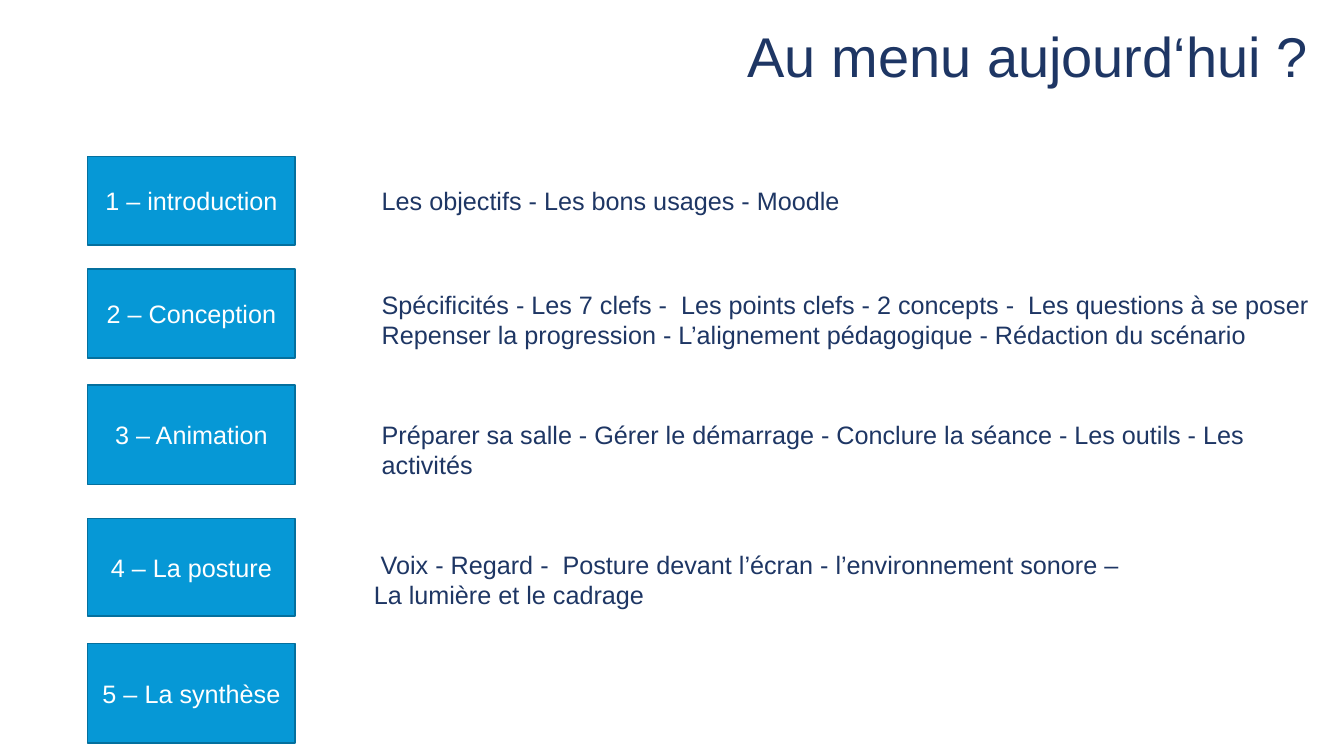
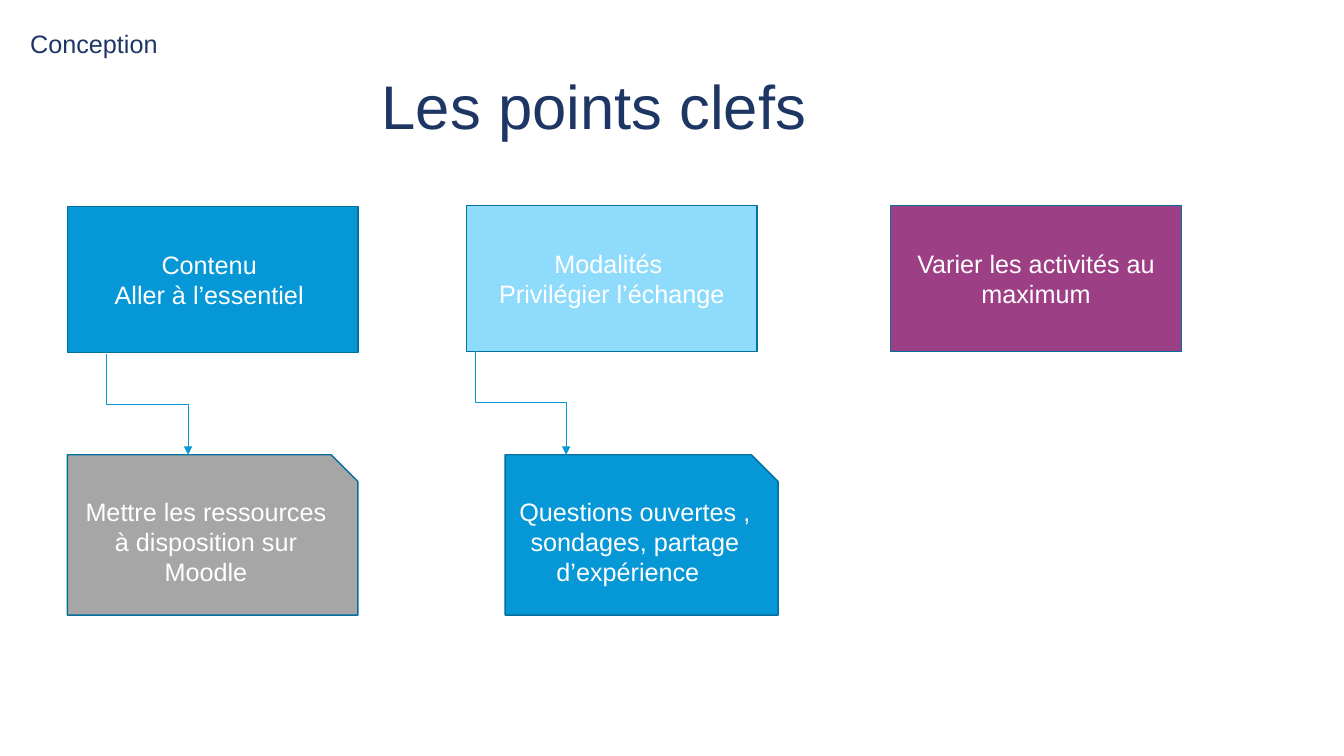
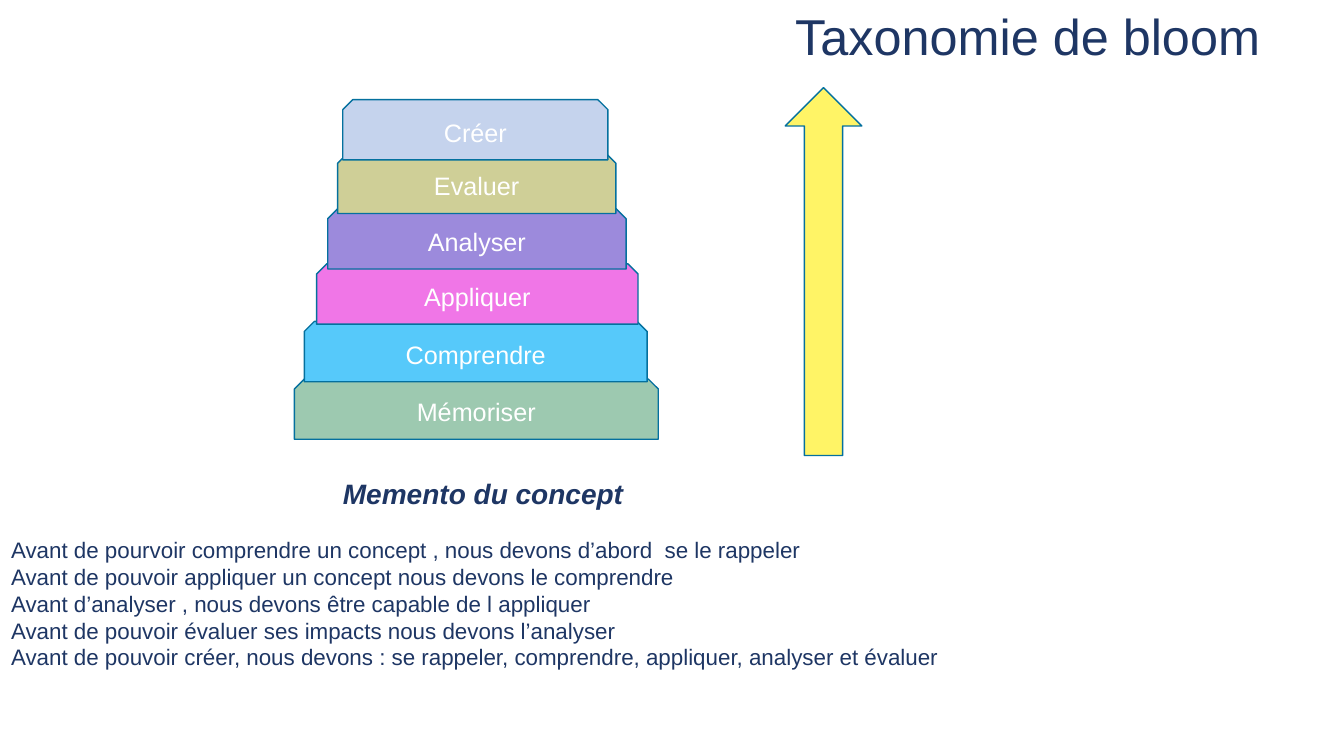
"""Build three training slides: the menu, the key points and Bloom's taxonomy."""
from lxml import etree
from pptx import Presentation
from pptx import util as u
from pptx.dml.color import RGBColor
from pptx.enum import shapes, text
from pptx.oxml.ns import qn

COLOURS = {
    "navy": "1E3664", "white": "FFFFFF", "blue": "0698D6", "outline": "04709E",
    "sky": "8EDBFC", "plum": "9D3F84", "grey": "A6A6A6", "yellow": "FFF466",
    "green": "9DC9B0", "azure": "56C9FA", "pink": "F076E7", "violet": "9C8ADC",
    "olive": "CFCF97", "pale": "C5D3ED",
}
FONT = "Arial"
SHAPE = shapes.MSO_SHAPE
CENTRE = text.PP_ALIGN.CENTER
MIDDLE = text.MSO_ANCHOR.MIDDLE


def colour(name):
    return RGBColor.from_string(COLOURS[name])


def apply_formats(target, formats):
    for name, value in formats.items():
        setattr(target, name, value)


def write_paragraph(paragraph, words, tint="navy", size=18, font=None, **formats):
    apply_formats(paragraph, formats)
    run = paragraph.add_run()
    run.text = words
    apply_formats(run.font, {"name": FONT, "size": u.Pt(size), **(font or {})})
    run.font.color.rgb = colour(tint)


def write_lines(frame, lines, **formats):
    for index, line in enumerate(lines):
        paragraph = frame.add_paragraph() if index else frame.paragraphs[0]
        write_paragraph(paragraph, line, **formats)


def add_text(slide, box, *lines, wrap=True, anchor=text.MSO_ANCHOR.TOP, **formats):
    frame = slide.shapes.add_textbox(*map(u.Cm, box)).text_frame
    apply_formats(frame, {"word_wrap": wrap, "vertical_anchor": anchor})
    write_lines(frame, lines, **formats)
    return frame


def add_title(slide, box, words, size):
    add_text(slide, box, words, size=size, anchor=MIDDLE, line_spacing=0.8)


def add_block(slide, kind, box, fill, *lines):
    shape = slide.shapes.add_shape(kind, *map(u.Cm, box))
    shape.shadow.inherit = False
    shape.fill.solid()
    shape.fill.fore_color.rgb = colour(fill)
    shape.line.color.rgb = colour("outline")
    shape.line.width = u.Pt(1)
    apply_formats(shape.text_frame, {"word_wrap": True, "vertical_anchor": MIDDLE})
    write_lines(shape.text_frame, lines, tint="white", alignment=CENTRE)


def add_down_elbow(slide, start, end):
    (left, top), (right, bottom) = start, end
    middle_x, middle_y = (left + right) / 2, (top + bottom) / 2
    half_run, half_drop = (right - left) / 2, (bottom - top) / 2
    corners = (middle_x + half_drop, middle_y - half_run,
               middle_x - half_drop, middle_y + half_run)
    connector = slide.shapes.add_connector(
        shapes.MSO_CONNECTOR.ELBOW, *map(u.Cm, corners))
    connector.line.color.rgb = colour("blue")
    connector.line.width = u.Pt(0.5)
    properties = connector._element.spPr
    properties.find(qn("a:xfrm")).set("rot", str(270 * 60000))
    etree.SubElement(properties.find(qn("a:ln")), qn("a:tailEnd"), type="triangle")
    etree.SubElement(properties, qn("a:effectLst"))


def build_menu(slide):
    add_title(slide, (18.59, 0.66, 14.66, 1.75), "Au menu aujourd‘hui ?", 40)
    steps = [
        (3.94, 2.24, "1 – introduction"),
        (6.78, 2.24, "2 – Conception"),
        (9.7, 2.51, "3 – Animation"),
        (13.06, 2.46, "4 – La posture"),
        (16.21, 2.51, "5 – La synthèse"),
    ]
    for top, height, label in steps:
        add_block(slide, SHAPE.RECTANGLE, (2.21, top, 5.23, height), "blue", label)
    details = [
        ((9.37, 4.55, 12.24, 1.02), "Les objectifs - Les bons usages - Moodle"),
        ((9.37, 7.16, 24.26, 1.8),
         "Spécificités - Les 7 clefs -  Les points clefs - 2 concepts -  "
         "Les questions à se poser  Repenser la progression - "
         "L’alignement pédagogique - Rédaction du scénario"),
        ((9.37, 10.44, 23.85, 1.8),
         "Préparer sa salle - Gérer le démarrage - Conclure la séance - "
         "Les outils - Les activités"),
        ((9.17, 13.72, 19.53, 1.8),
         " Voix - Regard -  Posture devant l’écran - l’environnement sonore – "
         "La lumière et le cadrage"),
    ]
    for box, words in details:
        add_text(slide, box, words)


def build_key_points(slide):
    add_title(slide, (9.37, 0.97, 18.69, 3.68), "Les points clefs", 44)
    points = [
        (1.7, 5.21, "blue", "Contenu ", "Aller à l’essentiel "),
        (11.76, 5.18, "sky", "Modalités ", "Privilégier l’échange"),
        (22.45, 5.18, "plum", "Varier les activités au maximum"),
    ]
    for left, top, fill, *lines in points:
        add_block(slide, SHAPE.RECTANGLE, (left, top, 7.32, 3.68), fill, *lines)
    actions = [
        (1.7, 7.32, "grey", "Mettre les ressources à disposition sur Moodle"),
        (12.73, 6.88, "blue", "Questions ouvertes , sondages, partage d’expérience  "),
    ]
    for left, width, fill, words in actions:
        add_block(slide, SHAPE.SNIP_1_RECTANGLE, (left, 11.46, width, 4.04), fill, words)
    add_down_elbow(slide, (2.69, 8.92), (4.74, 11.46))
    add_down_elbow(slide, (11.99, 8.84), (14.27, 11.46))
    add_text(slide, (0.51, 0.58, 4.65, 1.02), "Conception")


def build_taxonomy(slide):
    add_text(slide, (19.79, 0, 12.34, 1.8), "Taxonomie de bloom", size=36, wrap=False)
    levels = [
        (7.42, 9.55, 9.17, "green", "Mémoriser"),
        (7.67, 8.1, 8.64, "azure", "Comprendre"),
        (7.98, 6.65, 8.1, "pink", "Appliquer"),
        (8.26, 5.26, 7.52, "violet", "Analyser"),
        (8.51, 3.86, 7.01, "olive", "Evaluer"),
        (8.64, 2.51, 6.68, "pale", "Créer"),
    ]
    for left, top, width, fill, label in levels:
        add_block(slide, SHAPE.SNIP_2_SAME_RECTANGLE, (left, top, width, 1.52), fill, label)
    frame = add_text(slide, (0.03, 11.89, 24.49, 5.21), "Memento du concept ",
                     size=20, font={"bold": True, "italic": True}, alignment=CENTRE)
    reminders = [
        "Avant de pourvoir comprendre un concept , nous devons d’abord  se le rappeler",
        "Avant de pouvoir appliquer un concept nous devons le comprendre",
        "Avant d’analyser , nous devons être capable de l appliquer",
        "Avant de pouvoir évaluer ses impacts nous devons l’analyser",
        "Avant de pouvoir créer, nous devons : se rappeler, comprendre, appliquer, "
        "analyser et évaluer",
    ]
    for index, reminder in enumerate(reminders):
        write_paragraph(frame.add_paragraph(), reminder, size=16,
                        space_before=u.Pt(0 if index else 18.4))
    add_block(slide, SHAPE.UP_ARROW, (19.79, 2.21, 1.93, 9.27), "yellow")


def main():
    presentation = Presentation()
    presentation.slide_width, presentation.slide_height = u.Cm(33.87), u.Cm(19.05)
    for build in (build_menu, build_key_points, build_taxonomy):
        build(presentation.slides.add_slide(presentation.slide_layouts[6]))
    presentation.save("out.pptx")


if __name__ == "__main__":
    main()
